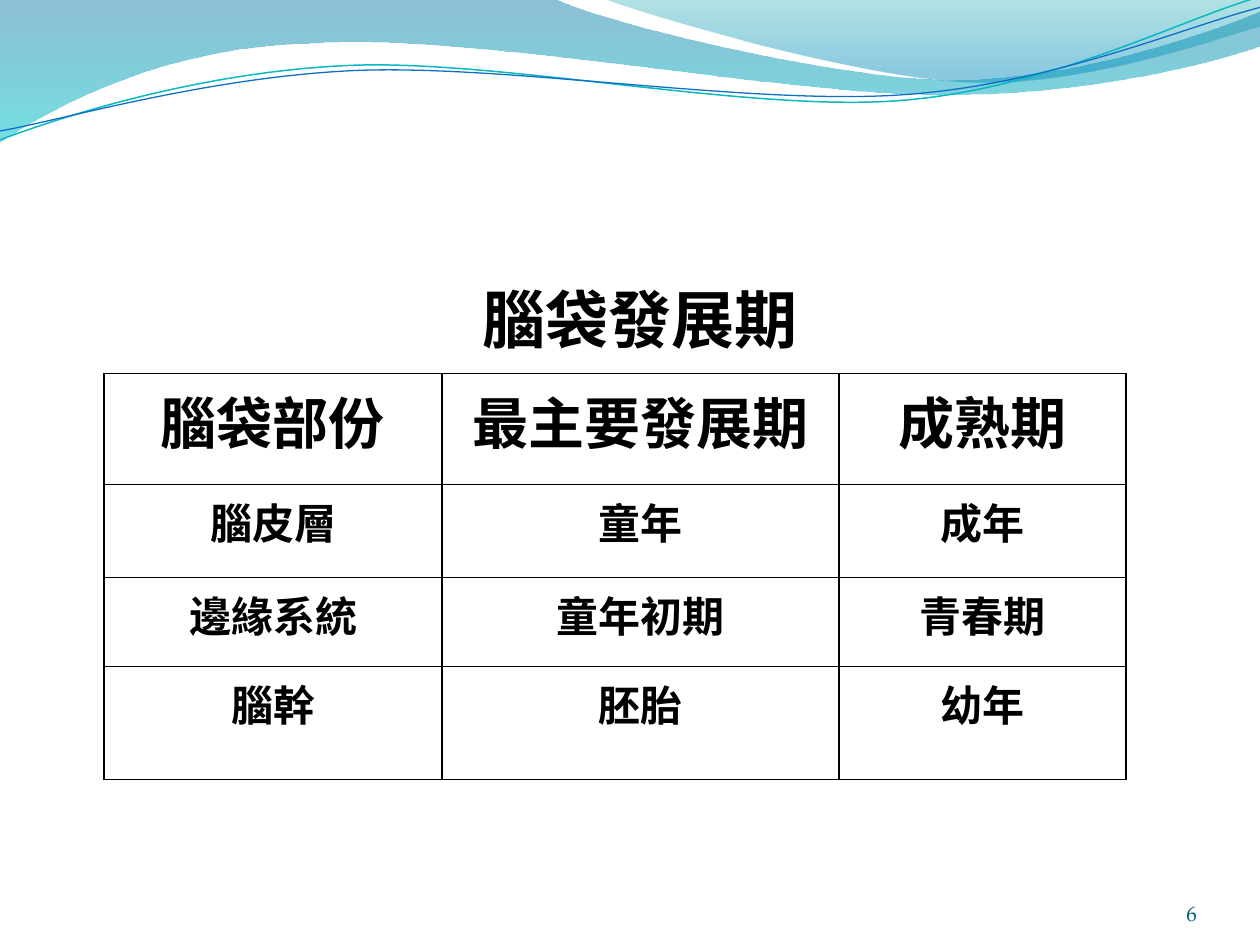
from dataclasses import dataclass
from math import cos, radians, sin

from lxml.etree import SubElement
from pptx import Presentation
from pptx.dml.color import RGBColor
from pptx.enum.text import MSO_ANCHOR, PP_ALIGN
from pptx.oxml.ns import qn
from pptx.util import Cm, Pt

FONT = "TeX Gyre Pagella"
BLACK = "000000"
LINE_TILT = -2.7
LINE_CENTER = (12.68, 1.48)


@dataclass
class Stop:
    position: float
    color: str
    opacity: int


@dataclass
class Wave:
    """Outline in cm: a step of 2 numbers is a line, of 6 a Bézier curve."""
    start: tuple[float, float]
    steps: list[tuple[float, ...]]
    stops: tuple[Stop, ...] = ()
    line_color: str = ""
    line_width: float = 0
    tilt: float = 0


WAVES = [
    Wave((0, 0),
         [(11.18, -0.03),
          (12.09, 0.43, 16.87, 1.6, 19.25, 1.6),
          (21.67, 1.6, 24.33, 0.66, 25.4, 0.23),
          (25.43, 0.91),
          (24.97, 1.12, 22.1, 1.93, 18.95, 1.91),
          (15.8, 1.91, 9.7, 0.71, 6.53, 0.86),
          (3.28, 0.91, 1.17, 2.11, -0.03, 2.87),
          (0, 0)],
         stops=(Stop(0, "0074A1", 45), Stop(1, "00C6CF", 55))),
    Wave((12.17, -0.03),
         [(12.93, 0.28, 17.32, 1.57, 19.53, 1.65),
          (21.74, 1.75, 24.41, 0.81, 25.4, 0.53),
          (25.4, 0),
          (12.17, -0.03)],
         stops=(Stop(0, "00A1A9", 30), Stop(0.8, "008BBF", 45))),
    Wave((0, 2.82),
         [(1.22, 2.36, 4.01, 1.45, 7.04, 1.32),
          (10.03, 1.19, 15.06, 2.26, 18.11, 2.03),
          (21.16, 1.8, 23.83, 0.38, 25.35, -0.05)],
         line_color="0AB8BF", line_width=0.85, tilt=LINE_TILT),
    Wave((0, 2.64),
         [(1.19, 2.44, 4.17, 1.55, 7.19, 1.42),
          (10.24, 1.3, 15.16, 2.13, 18.21, 1.91),
          (21.23, 1.7, 23.9, 0.53, 25.4, 0.15)],
         line_color="0F6FC6", line_width=0.75, tilt=LINE_TILT),
]


@dataclass
class Row:
    height: float
    size: int
    texts: tuple[str, str, str]
    sides: str = "LRTB"


TABLE_HEIGHT = 10.39
COLUMN_WIDTHS = (6.81, 8, 5.79)
ROWS = [
    Row(2.21, 36, ("", "腦袋發展期", ""), sides="B"),
    Row(2.24, 32, ("腦袋部份", "最主要發展期", "成熟期")),
    Row(1.87, 24, ("腦皮層", "童年", "成年")),
    Row(1.8, 24, ("邊緣系統", "童年初期", "青春期")),
    Row(2.27, 24, ("腦幹", "胚胎", "幼年")),
]


def rgb(color: str) -> RGBColor:
    return RGBColor.from_string(color)


def level_point(x: float, y: float, tilt: float) -> tuple[int, int]:
    """Turn a point back by the tilt that its shape will get."""
    if not tilt:
        return Cm(x), Cm(y)
    cx, cy = LINE_CENTER
    c, s = cos(radians(-tilt)), sin(radians(-tilt))
    dx, dy = x - cx, y - cy
    return Cm(cx + dx * c - dy * s), Cm(cy + dx * s + dy * c)


def bend(sp, steps: list[tuple[float, ...]]) -> None:
    """Join each three straight segments of a curve step into one Bézier curve."""
    segments = list(sp._element.iter(qn("a:lnTo")))
    for step in steps:
        first, *others = segments[:len(step) // 2]
        del segments[:len(step) // 2]
        if others:
            first.tag = qn("a:cubicBezTo")
        for other in others:
            first.append(other[0])
            other.getparent().remove(other)


def fill_gradient(sp, stops: tuple[Stop, ...]) -> None:
    """Fill from top to bottom with see-through colours."""
    sp.fill.gradient()
    sp.fill.gradient_angle = 270
    for gradient_stop, stop in zip(sp.fill.gradient_stops, stops):
        gradient_stop.position = stop.position
        gradient_stop.color.rgb = rgb(stop.color)
    for color, stop in zip(sp._element.spPr.iter(qn("a:srgbClr")), stops):
        SubElement(color, qn("a:alpha"), val=str(stop.opacity * 1000))


def draw_wave(slide, wave: Wave) -> None:
    start, *points = [level_point(x, y, wave.tilt)
                      for step in (wave.start, *wave.steps)
                      for x, y in zip(step[::2], step[1::2])]
    builder = slide.shapes.build_freeform(*start)
    builder.add_line_segments(points, close=bool(wave.stops))
    sp = builder.convert_to_shape()
    bend(sp, wave.steps)
    sp.rotation = wave.tilt
    sp.shadow.inherit = False
    if wave.stops:
        fill_gradient(sp, wave.stops)
        sp.line.fill.background()
    else:
        sp.fill.background()
        sp.line.color.rgb = rgb(wave.line_color)
        sp.line.width = Pt(wave.line_width)


def write(tf, text: str, size: int, color: str, align: PP_ALIGN, bold: bool = False) -> None:
    tf.text = text
    p = tf.paragraphs[0]
    p.alignment = align
    for r in p.runs:
        r.font.name = FONT
        r.font.size = Pt(size)
        r.font.bold = bold
        r.font.color.rgb = rgb(color)


def set_borders(cell, sides: str) -> None:
    """Draw the named sides in black and hide the others."""
    tc_pr = cell._tc.get_or_add_tcPr()
    for side in "LRTB":
        ln = SubElement(tc_pr, qn(f"a:ln{side}"), w=str(Pt(1)))
        if side in sides:
            fill = SubElement(ln, qn("a:solidFill"))
            SubElement(fill, qn("a:srgbClr"), val=BLACK)
        else:
            SubElement(ln, qn("a:noFill"))


def draw_table(slide) -> None:
    table = slide.shapes.add_table(len(ROWS), len(COLUMN_WIDTHS), Cm(2.1), Cm(5.32),
                                   Cm(sum(COLUMN_WIDTHS)), Cm(TABLE_HEIGHT)).table
    table.first_row = table.horz_banding = False
    for column, column_width in zip(table.columns, COLUMN_WIDTHS):
        column.width = Cm(column_width)
    for table_row, row in zip(table.rows, ROWS):
        table_row.height = Cm(row.height)
        for cell, text in zip(table_row.cells, row.texts):
            set_borders(cell, row.sides)
            cell.fill.background()
            if text:
                write(cell.text_frame, text, row.size, BLACK, PP_ALIGN.CENTER, bold=True)


def draw_page_number(slide, number: str) -> None:
    tf = slide.shapes.add_textbox(Cm(22.02), Cm(17.65), Cm(2.11), Cm(1.02)).text_frame
    tf.word_wrap = True
    tf.vertical_anchor = MSO_ANCHOR.BOTTOM
    tf.margin_left = tf.margin_right = tf.margin_top = tf.margin_bottom = 0
    write(tf, number, 12, "045D75", PP_ALIGN.RIGHT)


def main() -> None:
    prs = Presentation()
    prs.slide_width, prs.slide_height = Cm(25.4), Cm(19.05)
    slide = prs.slides.add_slide(prs.slide_layouts.get_by_name("Blank"))
    for wave in WAVES:
        draw_wave(slide, wave)
    draw_table(slide)
    draw_page_number(slide, "6")
    prs.save("out.pptx")


if __name__ == "__main__":
    main()
